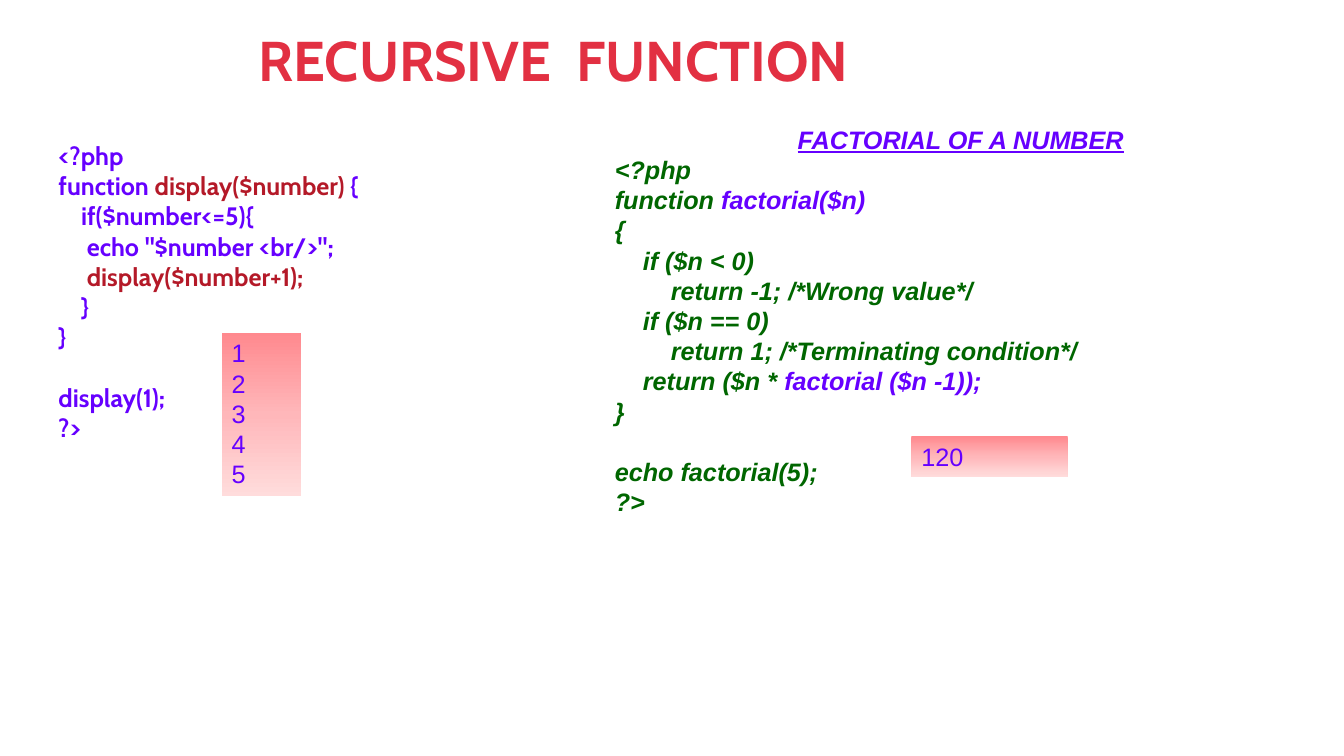
from copy import deepcopy
from pptx import Presentation
from pptx.dml.color import RGBColor
from pptx.enum.shapes import MSO_SHAPE
from pptx.enum.text import MSO_ANCHOR, PP_ALIGN
from pptx.util import Inches, Pt

VIOLET, RED, GREEN, TITLE = "6600FF", "B41928", "006600", "E23042"
SHADES = ["FF898E", "FFB7BA", "FFDCDC"]
PITCH = Pt(21.6)  # one line of 18 pt text
PAD = (0.1, 0.05)

# Text between bars takes the accent colour.
DISPLAY = """<?php
function |display($number) |{
    if($number<=5){
     echo "$number <br/>";
     |display($number+1);|
    }
}

display(1);
?>"""

FACTORIAL = """<?php
function |factorial($n)|
{
    if ($n < 0)
        return -1; /*Wrong value*/
    if ($n == 0)
        return 1; /*Terminating condition*/
    return ($n * |factorial ($n -1));|
}

echo factorial(5);
?>"""

HEAD = "FACTORIAL OF A NUMBER"
RESULTS = [
    ((2.2, 3.3, 0.79, 1.62), ["1", "2", "3", "4", "5"]),
    ((9.04, 4.33, 1.55, 0.4), ["120"]),
]

deck = Presentation()
deck.slide_width, deck.slide_height = Inches(13.33), Inches(7.5)
slide = deck.slides.add_slide(deck.slide_layouts[6])


def ink(code):
    return RGBColor.from_string(code)


def setup(shape, pad):
    frame = shape.text_frame
    frame.word_wrap = True
    frame.margin_left = frame.margin_right = Inches(pad[0])
    frame.margin_top = frame.margin_bottom = Inches(pad[1])
    return frame


def box(place, pad=(0, 0)):
    return setup(slide.shapes.add_textbox(*map(Inches, place)), pad)


def line(frame, parts, face, size=18, bold=False, italic=False):
    """Add a paragraph of (text, colour) runs, using the empty first one."""
    para = frame.paragraphs[0]
    if para.runs:
        para = frame.add_paragraph()
    for text, colour in parts:
        run = para.add_run()
        run.text = text
        run.font.color.rgb = ink(colour)
    font = para.font
    font.name, font.size, font.bold, font.italic = face, Pt(size), bold, italic
    if size == 18:
        para.line_spacing = PITCH
    return para


def code(frame, source, inks, face, italic=False):
    """Write code lines; a blank line becomes space before the next."""
    gap = False
    for row in source.splitlines():
        if not row:
            gap = True
            continue
        parts = [(text, inks[i % 2])
                 for i, text in enumerate(row.split("|")) if text]
        para = line(frame, parts, face, bold=True, italic=italic)
        if gap:
            para.space_before = PITCH
            gap = False


def result(place, rows):
    shape = slide.shapes.add_shape(MSO_SHAPE.RECTANGLE, *map(Inches, place))
    shape.shadow.inherit = False
    shape.line.fill.background()
    fill = shape.fill
    fill.gradient()
    fill.gradient_angle = 270
    first = fill.gradient_stops[0]._gs
    first.addnext(deepcopy(first))
    for i, (stop, shade) in enumerate(zip(fill.gradient_stops, SHADES)):
        stop.position = i / 2
        stop.color.rgb = ink(shade)
    frame = setup(shape, PAD)
    frame.vertical_anchor = MSO_ANCHOR.TOP
    for row in rows:
        line(frame, [(row, VIOLET)], "Arial").alignment = PP_ALIGN.LEFT


title = box((0.49, 0.25, 10, 0.67))
title.vertical_anchor = MSO_ANCHOR.BOTTOM
top = line(title, [("RECURSIVE  FUNCTION", TITLE)], "Cabin", 40, True)
top.alignment = PP_ALIGN.CENTER

code(box((0.58, 1.39, 5.05, 3.14)), DISPLAY, (VIOLET, RED), "Cabin")

right = box((6, 1.18, 7.06, 4.04), PAD)
head = line(right, [(HEAD, VIOLET)], "Arial", bold=True, italic=True)
head.alignment = PP_ALIGN.CENTER
head.runs[0].font.underline = True
code(right, FACTORIAL, (GREEN, VIOLET), "Arial", italic=True)

for place, rows in RESULTS:
    result(place, rows)

deck.save("out.pptx")
